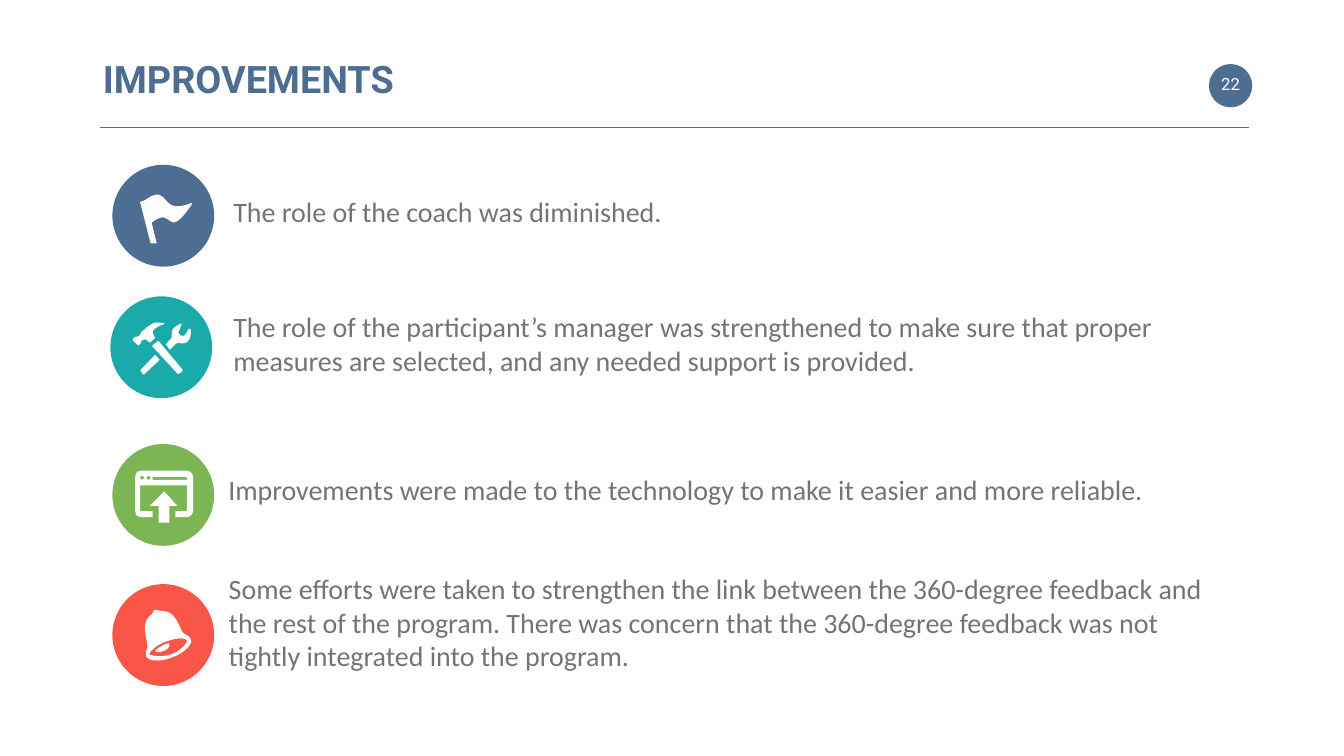
import pptx
import pptx.util
import pptx.dml.color
import pptx.enum.shapes
import pptx.enum.text
import pptx.oxml.ns
import lxml.etree

INCH = pptx.util.Inches
QN = pptx.oxml.ns.qn
KIND = pptx.enum.shapes.MSO_SHAPE.OVAL
ALIGN = pptx.enum.text.PP_ALIGN
ANCHOR = pptx.enum.text.MSO_ANCHOR

THEME = {
    "navy": "4D6D92", "teal": "1BAAAA", "green": "7CB554", "red": "F95648",
    "grey": "737572", "white": "FFFFFF",
    "title": {"name": "Roboto", "size": 54, "bold": True, "color": "navy"},
    "body": {"name": "Calibri", "size": 40, "bold": False, "color": "grey"},
    "page": {"name": "Roboto", "size": 24, "bold": False, "color": "white"},
}
WIDE, HIGH = 26.67, 15
COL, ROW = 2, HIGH / 5
DISC = 2.02


def dot(x):
    return [(x, 52), (x - 2, 52, x - 4, 50, x - 4, 48), (x - 4, 46, x - 2, 44, x, 44),
            (x + 2, 44, x + 4, 46, x + 4, 48), (x + 4, 50, x + 2, 52, x, 52)]


FLAG = [[(179, 103), (113, 130, 140, 60, 88, 97), (78, 101), (99, 183), (111, 183),
         (101, 142), (146, 105, 128, 183, 181, 105), (183, 105, 181, 103, 179, 103)]]
TOOLS = [
    [(82, 75), (86, 71, 90, 73, 96, 79), (98, 81, 98, 79, 98, 79),
     (100, 79, 106, 71, 108, 71), (108, 69), (106, 69, 105, 67, 105, 65),
     (94, 50, 133, 42, 127, 42), (123, 40, 111, 40, 108, 40),
     (102, 42, 92, 48, 88, 53), (82, 57, 80, 59, 80, 59), (78, 61, 80, 65, 76, 67),
     (72, 69, 70, 67, 67, 69), (67, 71, 65, 71, 63, 73), (63, 75), (72, 83),
     (72, 85, 73, 85, 76, 85), (76, 83, 78, 81, 80, 81), (80, 81, 80, 75, 82, 75)],
    [(115, 77), (113, 77), (105, 83), (102, 85, 102, 85, 102, 87), (152, 141),
     (152, 143, 154, 143, 156, 141), (162, 137), (162, 133)],
    [(179, 55), (176, 50, 176, 53, 174, 53), (174, 55, 170, 59, 170, 61),
     (168, 65, 164, 69, 158, 65), (152, 59, 154, 57, 156, 55),
     (156, 53, 160, 47, 160, 44), (162, 44, 160, 42, 158, 42),
     (156, 44, 144, 48, 141, 57), (139, 63, 144, 69, 137, 75), (129, 83), (137, 94),
     (148, 83), (150, 81, 154, 79, 158, 81), (168, 83, 172, 79, 176, 73),
     (179, 67, 179, 57, 179, 55)],
    [(80, 133), (78, 135, 78, 137, 80, 137), (84, 143), (86, 143, 88, 143, 88, 141),
     (117, 114), (108, 104)],
]
SCREEN = [
    [(171, 34), (80, 34), (72, 34, 68, 40, 68, 46), (68, 114), (68, 120, 72, 126, 80, 126),
     (103, 126), (103, 114), (78, 114), (78, 63), (171, 63), (171, 114), (148, 114),
     (148, 126), (171, 126), (177, 126, 183, 120, 183, 114), (183, 46),
     (183, 40, 177, 34, 171, 34)],
    dot(82), dot(95),
    [(171, 52), (103, 52), (103, 46), (171, 46)],
    [(126, 75), (97, 104), (115, 104), (115, 137), (136, 137), (136, 104), (152, 104)],
]
BELL = [
    [(160, 51), (148, 22, 140, 12, 119, 12), (111, 12, 113, 7, 107, 10),
     (100, 12, 107, 14, 100, 20), (84, 32, 86, 47, 92, 76), (96, 88, 86, 90, 90, 102),
     (93, 111, 117, 115, 142, 104), (166, 96, 183, 77, 179, 69),
     (175, 57, 166, 63, 160, 51)],
    [(140, 98), (117, 106, 98, 100, 96, 98), (96, 96, 105, 82, 129, 73),
     (156, 63, 171, 67, 171, 71), (173, 73, 162, 90, 140, 98)],
    [(131, 77), (119, 82, 113, 86, 107, 92), (111, 94, 117, 96, 123, 92),
     (133, 90, 138, 82, 136, 76), (136, 76, 133, 77, 131, 77)],
]

TITLE = "IMPROVEMENTS"
PAGE = "22"
ITEMS = [
    {"text": "The role of the coach was diminished.", "hue": "navy", "icon": FLAG,
     "disc": (0.23, 0.27), "box": (2.43, 0.76, 14.45, 0.88), "pad": 0.2},
    {"text": "The role of the participant’s manager was strengthened to make sure that "
             "proper measures are selected, and any needed support is provided.",
     "hue": "teal", "icon": TOOLS,
     "disc": (0.19, -0.12), "box": (2.43, 0.05, 20.08, 1.55), "pad": 0.2},
    {"text": "Improvements were made to the technology to make it easier and more reliable.",
     "hue": "green", "icon": SCREEN,
     "disc": (0.23, -0.19), "box": (2.33, 0.27, 21.1, 0.88), "pad": 0.2},
    {"text": "Some efforts were taken to strengthen the link between the 360-degree feedback "
             "and the rest of the program. There was concern that the 360-degree feedback "
             "was not tightly integrated into the program.", "hue": "red", "icon": BELL,
     "disc": (0.23, -0.41), "box": (2.44, -0.71, 20.06, 2.12), "pad": 0.1},
]


def tint(name):
    return pptx.dml.color.RGBColor.from_string(THEME[name])


def paint(shape, hue):
    shape.shadow.inherit = False
    shape.fill.solid()
    shape.fill.fore_color.rgb = tint(hue)
    shape.line.fill.background()


def place(shape, box):
    for key, val in zip(("left", "top", "width", "height"), box):
        setattr(shape, key, INCH(val))


def write(shape, text, style, pad, align=ALIGN.LEFT, anchor=ANCHOR.TOP):
    frame = shape.text_frame
    look = {"word_wrap": True, "auto_size": pptx.enum.text.MSO_AUTO_SIZE.NONE,
            "vertical_anchor": anchor, "margin_left": INCH(pad), "margin_right": INCH(pad),
            "margin_top": INCH(pad / 2), "margin_bottom": INCH(pad / 2)}
    for key, val in look.items():
        setattr(frame, key, val)
    line = frame.paragraphs[0]
    line.alignment = align
    run = line.add_run()
    run.text = text
    font = THEME[style]
    for key, val in {"name": font["name"], "size": pptx.util.Pt(font["size"]),
                     "bold": font["bold"]}.items():
        setattr(run.font, key, val)
    run.font.color.rgb = tint(font["color"])


def draw(shapes, icon, left, top):
    ends = [[seg[-2:] for seg in part] for part in icon]
    pen = shapes.build_freeform(*ends[0][0], scale=INCH(1) / 100)
    for num, dots in enumerate(ends):
        if num:
            pen.move_to(*dots[0])
        pen.add_line_segments(dots[1:], close=True)
    shape = pen.convert_to_shape(INCH(left), INCH(top))
    paint(shape, "white")
    low = [min(dot[a] for dots in ends for dot in dots) for a in (0, 1)]
    segs = [seg for part in icon for seg in part[1:]]
    for node, seg in zip(list(shape._element.iter(QN("a:lnTo"))), segs):
        if len(seg) == 6:
            node.tag = QN("a:cubicBezTo")
            for i in (2, 0):
                knot = lxml.etree.Element(QN("a:pt"), x=str(seg[i] - low[0]),
                                          y=str(seg[i + 1] - low[1]))
                node.insert(0, knot)


def disc(shapes, left, top, size, hue):
    paint(shapes.add_shape(KIND, *map(INCH, (left, top, size, size))), hue)


def main():
    deck = pptx.Presentation()
    deck.slide_width, deck.slide_height = INCH(WIDE), INCH(HIGH)
    slide = deck.slides.add_slide(deck.slide_layouts[5])
    shapes = slide.shapes

    place(shapes.title, (1.94, 1.06, 23.24, 1.01))
    write(shapes.title, TITLE, "title", 0.1)
    rule = shapes.add_connector(pptx.enum.shapes.MSO_CONNECTOR.STRAIGHT,
                                *map(INCH, (1.98, 2.53, 24.79, 2.53)))
    rule.line.color.rgb = tint("navy")
    rule.line.width = pptx.util.Pt(2.25)
    node = rule._element
    lxml.etree.SubElement(node.spPr, QN("a:effectLst"))
    node.remove(node.find(QN("p:style")))
    disc(shapes, 23.99, 1.27, 0.86, "navy")
    page = shapes.add_textbox(*map(INCH, (23.91, 1.3, 1.02, 0.73)))
    write(page, PAGE, "page", 0.24, ALIGN.CENTER, ANCHOR.MIDDLE)

    for num, item in enumerate(ITEMS, 1):
        top = num * ROW
        x, y = item["disc"]
        disc(shapes, COL + x, top + y, DISC, item["hue"])
        draw(shapes, item["icon"], COL, top)
        x, y, wide, high = item["box"]
        box = shapes.add_textbox(*map(INCH, (COL + x, top + y, wide, high)))
        write(box, item["text"], "body", item["pad"])

    deck.save("out.pptx")


if __name__ == "__main__":
    main()
